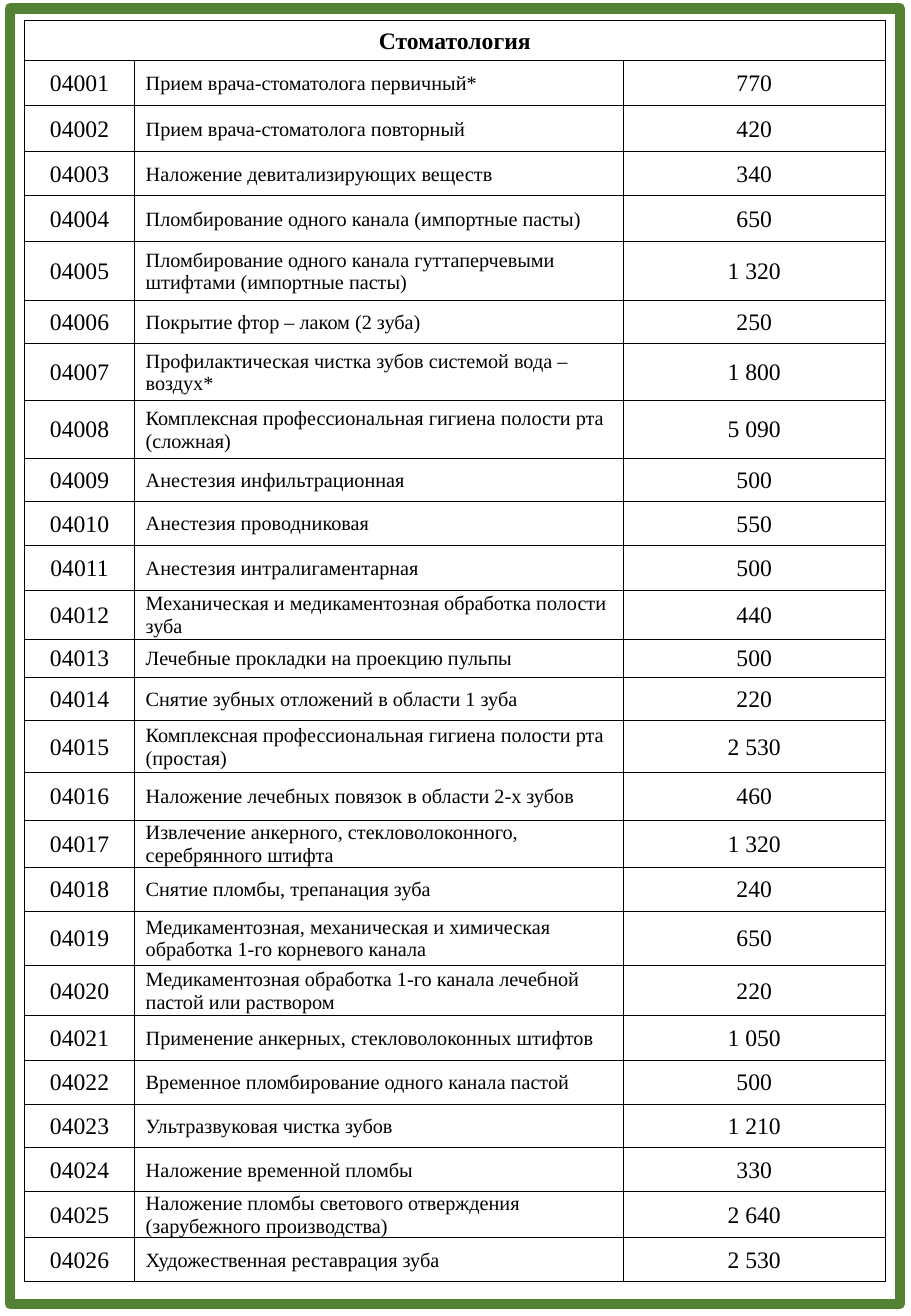
from lxml import etree
from pptx import Presentation
from pptx.dml import color
from pptx.enum import shapes, text
from pptx.oxml import ns
from pptx.util import Inches, Pt

FONT = "Times New Roman"
BLACK = "000000"
COLUMN_WIDTHS = [0.91, 4.02, 2.16]
TITLE_HEIGHT = 0.33
SERVICES = [
    ("Прием врача-стоматолога первичный*", "770", 0.37),
    ("Прием врача-стоматолога повторный", "420", 0.38),
    ("Наложение девитализирующих веществ", "340", 0.36),
    ("Пломбирование одного канала (импортные пасты)", "650", 0.38),
    ("Пломбирование одного канала гуттаперчевыми штифтами (импортные пасты)", "1 320", 0.48),
    ("Покрытие фтор – лаком (2 зуба)", "250", 0.36),
    ("Профилактическая чистка зубов системой вода – воздух*", "1 800", 0.47),
    ("Комплексная профессиональная гигиена полости рта (сложная)", "5 090", 0.47),
    ("Анестезия инфильтрационная", "500", 0.36),
    ("Анестезия проводниковая", "550", 0.36),
    ("Анестезия интралигаментарная", "500", 0.37),
    ("Механическая и медикаментозная обработка полости зуба", "440", 0.4),
    ("Лечебные прокладки на проекцию пульпы", "500", 0.32),
    ("Снятие зубных отложений в области 1 зуба", "220", 0.35),
    ("Комплексная профессиональная гигиена полости рта (простая)", "2 530", 0.43),
    ("Наложение лечебных повязок в области 2-х зубов", "460", 0.39),
    ("Извлечение анкерного, стекловолоконного, серебрянного штифта", "1 320", 0.39),
    ("Снятие пломбы, трепанация зуба", "240", 0.36),
    ("Медикаментозная, механическая и химическая обработка 1-го корневого канала", "650", 0.45),
    ("Медикаментозная обработка 1-го канала лечебной пастой или раствором", "220", 0.41),
    ("Применение анкерных, стекловолоконных штифтов", "1 050", 0.37),
    ("Временное пломбирование одного канала пастой", "500", 0.36),
    ("Ультразвуковая чистка зубов", "1 210", 0.36),
    ("Наложение временной пломбы", "330", 0.36),
    ("Наложение пломбы светового отверждения (зарубежного производства)", "2 640", 0.36),
    ("Художественная реставрация зуба", "2 530", 0.36),
]


def rgb(value):
    return color.RGBColor.from_string(value)


def add_frame(slide):
    frame = slide.shapes.add_shape(
        shapes.MSO_SHAPE.RECTANGLE, Inches(0.08), Inches(0.07), Inches(7.33), Inches(10.66))
    frame.shadow.inherit = False
    frame.fill.background()
    frame.line.color.rgb = rgb("548235")
    frame.line.width = Pt(6)


def style_cell(cell):
    properties = cell._tc.get_or_add_tcPr()
    for side in ("lnL", "lnR", "lnT", "lnB"):
        line = etree.SubElement(properties, ns.qn(f"a:{side}"), w=str(Pt(0.5)))
        fill = etree.SubElement(line, ns.qn("a:solidFill"))
        etree.SubElement(fill, ns.qn("a:srgbClr"), val=BLACK)
    cell.fill.background()
    cell.margin_left = cell.margin_right = cell.margin_top = Inches(0.01)
    cell.margin_bottom = 0
    cell.vertical_anchor = text.MSO_ANCHOR.MIDDLE


def write_cell(cell, content, size=14, bold=False, indent=None):
    cell.text_frame.text = content
    paragraph = cell.text_frame.paragraphs[0]
    if indent is None:
        paragraph.alignment = text.PP_ALIGN.CENTER
    else:
        properties = paragraph._p.get_or_add_pPr()
        properties.set("marL", str(Inches(indent)))
        properties.set("indent", "0")
    font = paragraph.runs[0].font
    font.name = FONT
    font.size = Pt(size)
    font.bold = bold
    font.color.rgb = rgb(BLACK)


def add_price_list(slide):
    heights = [TITLE_HEIGHT] + [height for _, _, height in SERVICES]
    table = slide.shapes.add_table(
        len(heights), len(COLUMN_WIDTHS), Inches(0.2), Inches(0.17),
        Inches(sum(COLUMN_WIDTHS)), Inches(sum(heights))).table
    table.first_row = table.horz_banding = False
    for column, width in zip(table.columns, COLUMN_WIDTHS):
        column.width = Inches(width)
    for row, height in zip(table.rows, heights):
        row.height = Inches(height)
    for cell in table.iter_cells():
        style_cell(cell)

    table.cell(0, 0).merge(table.cell(0, len(COLUMN_WIDTHS) - 1))
    write_cell(table.cell(0, 0), "Стоматология", bold=True)
    for number, (service, price, _) in enumerate(SERVICES, 1):
        write_cell(table.cell(number, 0), f"04{number:03}")
        write_cell(table.cell(number, 1), service, size=12, indent=0.08)
        write_cell(table.cell(number, 2), price)


def main():
    presentation = Presentation()
    presentation.slide_width = Inches(7.5)
    presentation.slide_height = Inches(10.83)
    slide = presentation.slides.add_slide(presentation.slide_layouts[6])
    add_frame(slide)
    add_price_list(slide)
    presentation.save("out.pptx")


if __name__ == "__main__":
    main()
